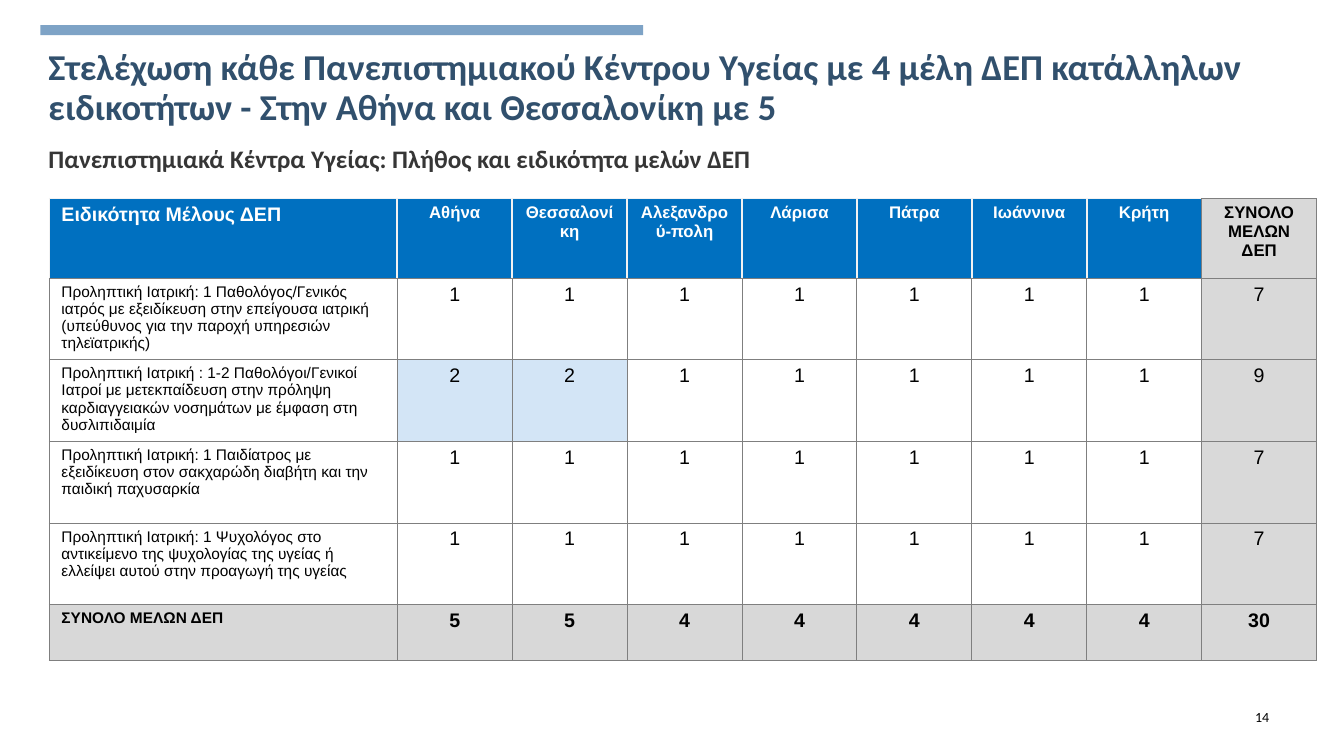
from pptx import Presentation
from pptx.dml.color import RGBColor
from pptx.enum.shapes import MSO_SHAPE
from pptx.enum.text import MSO_ANCHOR, MSO_AUTO_SIZE, PP_ALIGN
from pptx.oxml.ns import qn
from pptx.util import Inches, Pt
from lxml import etree

RECTANGLE = MSO_SHAPE.RECTANGLE
TOP, MIDDLE = MSO_ANCHOR.TOP, MSO_ANCHOR.MIDDLE
LEFT, CENTER = PP_ALIGN.LEFT, PP_ALIGN.CENTER
NO_AUTO_SIZE = MSO_AUTO_SIZE.NONE

ACCENT = RGBColor(0x7E, 0xA3, 0xC6)
NAVY = RGBColor(0x31, 0x50, 0x6D)
CHARCOAL = RGBColor(0x36, 0x36, 0x36)
BLACK = RGBColor(0x00, 0x00, 0x00)
WHITE = RGBColor(0xFF, 0xFF, 0xFF)
HEADER_BLUE = RGBColor(0x00, 0x70, 0xC0)
LIGHT_BLUE = RGBColor(0xD3, 0xE5, 0xF6)
SUM_COLUMN_GREY = RGBColor(0xD9, 0xD9, 0xD9)
SUM_ROW_GREY = RGBColor(0xD8, 0xD8, 0xD8)
GRID_GREY = RGBColor(0x7F, 0x7F, 0x7F)
HEADER_LINE = RGBColor(0xF2, 0xF2, 0xF2)

TITLE = ("Στελέχωση κάθε Πανεπιστημιακού Κέντρου Υγείας με 4 μέλη ΔΕΠ κατάλληλων "
         "ειδικοτήτων - Στην Αθήνα και Θεσσαλονίκη με 5")
SUBTITLE = "Πανεπιστημιακά Κέντρα Υγείας: Πλήθος και ειδικότητα μελών ΔΕΠ"
TOTAL = "ΣΥΝΟΛΟ ΜΕΛΩΝ ΔΕΠ"
CITIES = ["Αθήνα", "Θεσσαλονίκη", "Αλεξανδρού-πολη", "Λάρισα", "Πάτρα",
          "Ιωάννινα", "Κρήτη"]
SPECIALTIES = [
    ("Προληπτική Ιατρική: 1 Παθολόγος/Γενικός ιατρός με εξειδίκευση στην επείγουσα "
     "ιατρική (υπεύθυνος για την παροχή υπηρεσιών τηλεϊατρικής)",
     [1, 1, 1, 1, 1, 1, 1]),
    ("Προληπτική Ιατρική : 1-2 Παθολόγοι/Γενικοί Ιατροί με μετεκπαίδευση στην "
     "πρόληψη καρδιαγγειακών νοσημάτων με έμφαση στη δυσλιπιδαιμία",
     [2, 2, 1, 1, 1, 1, 1]),
    ("Προληπτική Ιατρική: 1 Παιδίατρος με εξειδίκευση στον σακχαρώδη διαβήτη και "
     "την παιδική παχυσαρκία",
     [1, 1, 1, 1, 1, 1, 1]),
    ("Προληπτική Ιατρική: 1 Ψυχολόγος στο αντικείμενο της ψυχολογίας της υγείας ή "
     "ελλείψει αυτού στην προαγωγή της υγείας",
     [1, 1, 1, 1, 1, 1, 1]),
]
ROW_HEIGHTS = [0.79, 0.81, 0.81, 0.81, 0.81, 0.55]
FIRST_COLUMN, CITY_COLUMN = 3.45, 1.14


def add_span(para, text, font_name, size, color, bold=False):
    span = para.add_run()
    span.text = text
    span.font.name = font_name
    span.font.size = Pt(size)
    span.font.color.rgb = color
    span.font.bold = bold


def fill_text_box(box, bounds, text, size, color, bold, anchor, insets):
    """Place a box and write one left-aligned, unbulleted paragraph in it."""
    box.left, box.top, box.width, box.height = [Inches(value) for value in bounds]
    frame = box.text_frame
    frame.word_wrap = True
    frame.auto_size = NO_AUTO_SIZE
    frame.vertical_anchor = anchor
    (frame.margin_left, frame.margin_top,
     frame.margin_right, frame.margin_bottom) = [Inches(value) for value in insets]
    para = frame.paragraphs[0]
    para.alignment = LEFT
    para.space_before = Pt(0)
    properties = para._p.get_or_add_pPr()
    properties.set("marL", "0")
    properties.set("indent", "0")
    etree.SubElement(properties, qn("a:buNone"))
    add_span(para, text, "Calibri", size, color, bold)
    return para


def add_accent_bar(page, bounds):
    bar = page.shapes.add_shape(RECTANGLE, *[Inches(value) for value in bounds])
    bar.shadow.inherit = False
    bar.fill.solid()
    bar.fill.fore_color.rgb = ACCENT
    bar.line.fill.background()


def add_headings(page, left, top, width):
    insets = (0.12, 0.05, 0.1, 0.05)
    title = fill_text_box(page.shapes.title, (left, top, width, 0.91),
                          TITLE, 26, NAVY, True, TOP, insets)
    title.line_spacing = 0.9
    fill_text_box(page.placeholders[1], (left, top + 0.93, width, 0.4),
                  SUBTITLE, 18, CHARCOAL, True, MIDDLE, insets)


def add_page_number(page, bounds):
    box = page.shapes.add_textbox(0, 0, 0, 0)
    fill_text_box(box, bounds, "14", 10, BLACK, False, MIDDLE, (0.1, 0.1, 0.1, 0.1))


def set_border(cell, side, color, width):
    line = etree.SubElement(cell._tc.get_or_add_tcPr(), qn("a:ln" + side),
                            w=str(Pt(width)))
    solid = etree.SubElement(line, qn("a:solidFill"))
    etree.SubElement(solid, qn("a:srgbClr"), val=str(color))


def format_cell(cell, text, size, color, bold, alignment, fill, pale_sides="",
                side_margin=0.12):
    """Write a cell; the sides named in pale_sides get the header line."""
    for side in "LRTB":
        if side in pale_sides:
            set_border(cell, side, HEADER_LINE, 1.47)
        else:
            set_border(cell, side, GRID_GREY, 0.75)
    if fill is None:
        cell.fill.background()
    else:
        cell.fill.solid()
        cell.fill.fore_color.rgb = fill
    cell.margin_left = cell.margin_right = Inches(side_margin)
    cell.margin_top = cell.margin_bottom = Inches(0.05)
    para = cell.text_frame.paragraphs[0]
    para.alignment = alignment
    add_span(para, text, "Arial", size, color, bold)


def fill_header_row(table):
    format_cell(table.cell(0, 0), "Ειδικότητα Μέλους ΔΕΠ", 14, WHITE, True, LEFT,
                HEADER_BLUE, "LRT")
    for column, city in enumerate(CITIES, 1):
        pale_sides = "LT" if column == len(CITIES) else "LRT"
        format_cell(table.cell(0, column), city, 12, WHITE, True, CENTER,
                    HEADER_BLUE, pale_sides, 0.1)
    format_cell(table.cell(0, len(CITIES) + 1), TOTAL, 12, BLACK, True, CENTER,
                SUM_COLUMN_GREY, side_margin=0.1)


def fill_count_row(table, row, label, counts, is_total=False):
    label_fill = SUM_ROW_GREY if is_total else None
    format_cell(table.cell(row, 0), label, 11, BLACK, is_total, LEFT, label_fill)
    for column, count in enumerate(counts + [sum(counts)], 1):
        if is_total:
            fill = SUM_ROW_GREY
        elif column > len(counts):
            fill = SUM_COLUMN_GREY
        else:
            fill = LIGHT_BLUE if count > 1 else None
        format_cell(table.cell(row, column), str(count), 14, BLACK, is_total,
                    CENTER, fill)


def add_staff_table(page, left, top):
    widths = [FIRST_COLUMN] + [CITY_COLUMN] * (len(CITIES) + 1)
    frame = page.shapes.add_table(len(ROW_HEIGHTS), len(widths), Inches(left),
                                  Inches(top), Inches(sum(widths)),
                                  Inches(sum(ROW_HEIGHTS)))
    table = frame.table
    table.first_row = table.horz_banding = False
    for column, width in zip(table.columns, widths):
        column.width = Inches(width)
    for row, height in zip(table.rows, ROW_HEIGHTS):
        row.height = Inches(height)
    fill_header_row(table)
    for row, (label, counts) in enumerate(SPECIALTIES, 1):
        fill_count_row(table, row, label, counts)
    city_totals = [sum(column) for column in zip(*[counts for _, counts in SPECIALTIES])]
    fill_count_row(table, len(SPECIALTIES) + 1, TOTAL, city_totals, True)


def main():
    deck = Presentation()
    deck.slide_width, deck.slide_height = Inches(13.33), Inches(7.5)
    page = deck.slides.add_slide(deck.slide_layouts[1])
    add_accent_bar(page, (0.4, 0.25, 5.98, 0.1))
    add_headings(page, 0.36, 0.44, 12.4)
    add_page_number(page, (12.35, 6.97, 0.57, 0.28))
    add_staff_table(page, 0.49, 1.97)
    deck.save("out.pptx")


if __name__ == "__main__":
    main()
